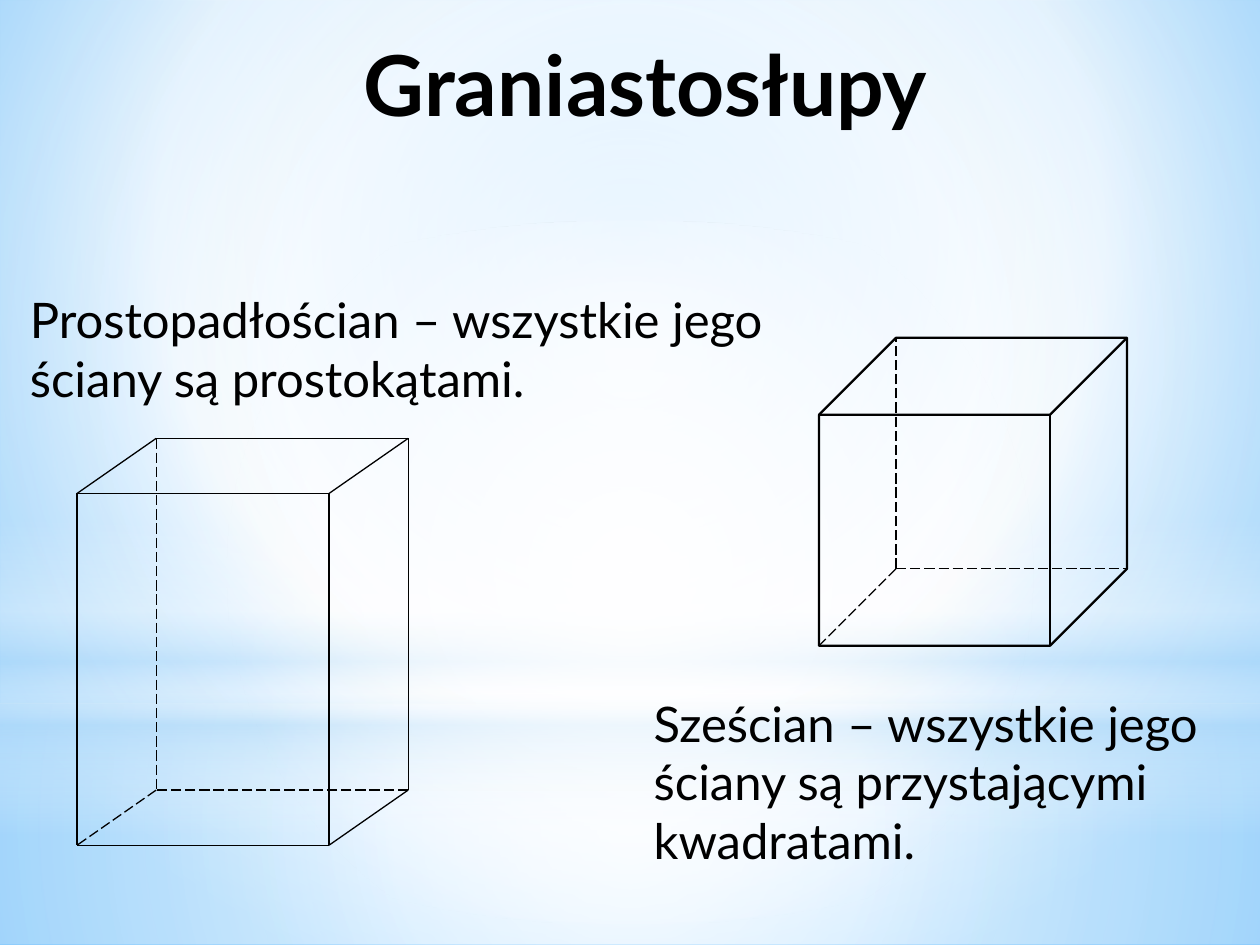
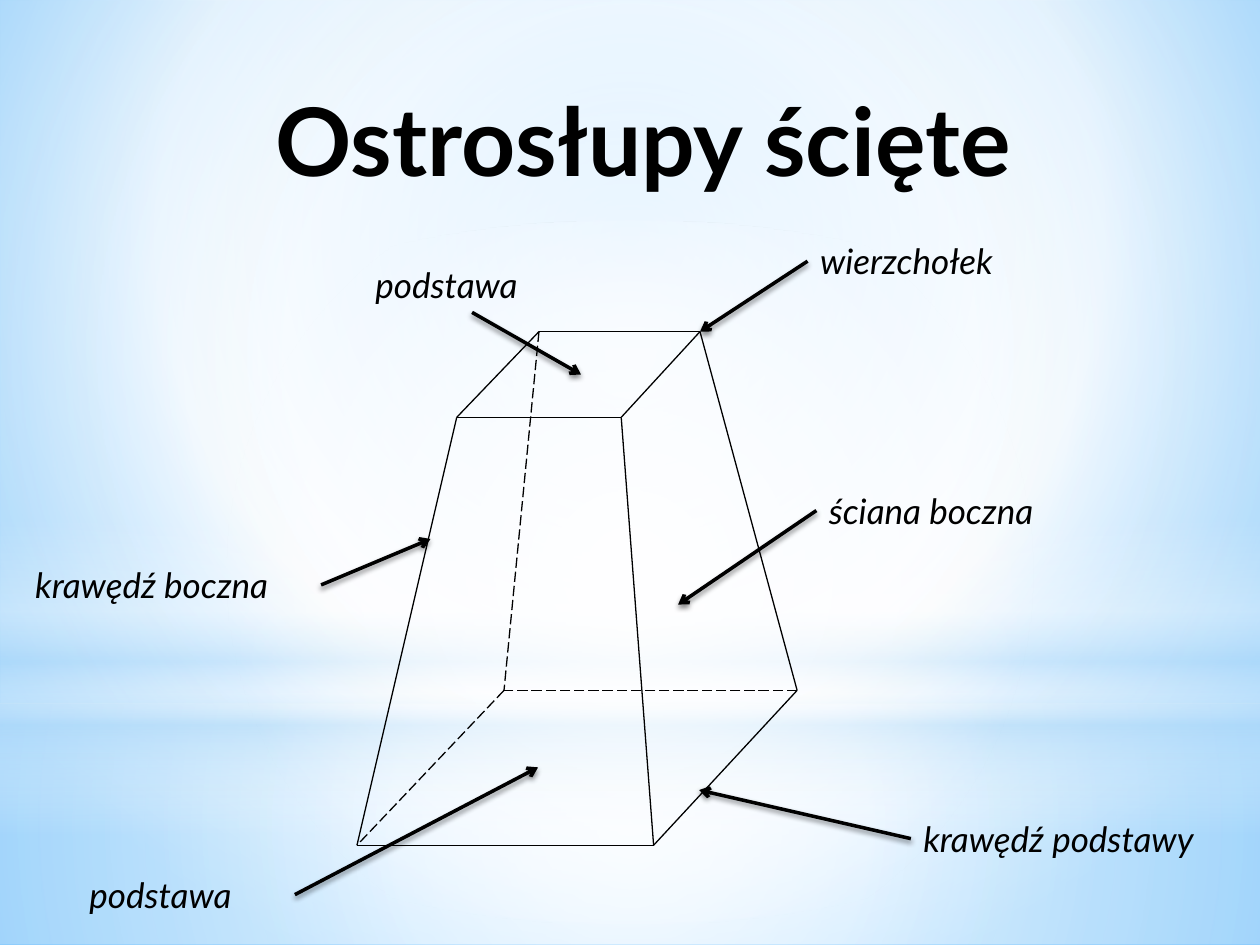
import pptx
import pptx.dml.color
import pptx.enum.dml
import pptx.enum.shapes
import pptx.enum.text
import pptx.oxml
import pptx.oxml.ns
import pptx.util

Pt = pptx.util.Pt
SHAPE = pptx.enum.shapes.MSO_SHAPE
ALIGN = pptx.enum.text.PP_ALIGN
LONG_DASH = pptx.enum.dml.MSO_LINE.LONG_DASH

# Shared style
WIDTH, HEIGHT = 720, 540
FONT, BLACK, WHITE, SKY, GLOW = "Lato", "000000", "FFFFFF", "B4DCFA", "52D2FF"
THIN, CUBE_LINE, ARROW_LINE = 0.75, 1.25, 2
TOP, BOTTOM, LEFT, RIGHT = 0, 2, 1, 3

# Gradients: stops are (position, colour, opacity) in percent
CENTRE = (50, 50, 50, 50)
BACKGROUND = ([(0, "9ED5FF", 100), (60, WHITE, 100), (100, "5BB9FF", 100)], (20, 10, 20, 60))
BANDS = [  # preset, top, height, stops, focus (None for a vertical gradient)
    (SHAPE.RECTANGLE, 402, 138, [(0, WHITE, 91), (37, WHITE, 76), (100, SKY, 79)], CENTRE),
    (SHAPE.RECTANGLE, 0, 402, [(0, WHITE, 89), (48, WHITE, 62), (100, SKY, 79)], CENTRE),
    (SHAPE.RECTANGLE, 297, 180, [(0, WHITE, 0), (29, WHITE, 30), (45, SKY, 40),
                                 (55, WHITE, 26), (65, SKY, 60), (100, WHITE, 0)], None),
    (SHAPE.OVAL, 126, 402, [(0, WHITE, 100), (56, WHITE, 0)], CENTRE),
]

# Slide 1: prisms
PRISM_TITLE = ("Graniastosłupy", 48, (52, 15, 634, 65.5), True)
DEFINITIONS = [
    ("Prostopadłościan – wszystkie jego ściany są prostokątami.", (10, 162, 450, 75)),
    ("Sześcian – wszystkie jego ściany są przystającymi kwadratami.", (366.5, 392.5, 338, 109)),
]
CUBOID_FRONT = (44, 282, 188, 483)  # left, top, right, bottom
CUBOID_DEPTH = (45.25, -31.5)
CUBE_LEFT, CUBE_TOP, CUBE_SIZE = 468, 193, 176

# Slide 2: frustum, corners as front left, front right, back right, back left
FRUSTUM_TITLE = ("Ostrosłupy ścięte", 54, (141, 43, 453, 73), False)
FRUSTUM_TOP = [(261, 238.5), (355, 238.5), (400, 189.5), (308, 189.5)]
FRUSTUM_BASE = [(204, 483), (373.5, 483), (455.5, 394.5), (288, 394.5)]
LABEL_HEIGHT = 31.5
LABELS = [  # text, left, top, width, side the arrow leaves, arrow tip
    ("wierzchołek", 461.5, 133.5, 153.5, LEFT, (400, 189.5)),
    ("ściana boczna", 466.5, 276, 193, LEFT, (387.5, 345.5)),
    ("krawędź boczna", 13, 318.5, 170.5, RIGHT, (246, 308)),
    ("krawędź podstawy", 520.5, 463.5, 187, LEFT, (399.5, 451.5)),
    ("podstawa", 207.5, 147, 124.5, BOTTOM, (332, 214)),
    ("podstawa", 44, 495.5, 124.5, RIGHT, (307.5, 438.5)),
]


def color(hex_code):
    return pptx.dml.color.RGBColor.from_string(hex_code)


def drawing_xml(markup):
    """Parse one DrawingML element, adding the namespace to its first tag."""
    name, rest = markup[1:].split(" ", 1)
    return pptx.oxml.parse_xml(f"<{name} {pptx.oxml.ns.nsdecls('a')} {rest}")


def set_gradient(fill, holder, stops, focus):
    fill.solid()
    stop_xml = "".join(
        f'<a:gs pos="{position * 1000}"><a:srgbClr val="{code}">'
        f'<a:alpha val="{opacity * 1000}"/></a:srgbClr></a:gs>'
        for position, code, opacity in stops)
    if focus:
        sides = " ".join(f'{side}="{share * 1000}"' for side, share in zip("ltrb", focus))
        direction = f'<a:path path="circle"><a:fillToRect {sides}/></a:path>'
    else:
        direction = '<a:lin ang="5400000" scaled="0"/>'
    solid = holder.find(pptx.oxml.ns.qn("a:solidFill"))
    holder.replace(solid, drawing_xml(
        f'<a:gradFill rotWithShape="1"><a:gsLst>{stop_xml}</a:gsLst>{direction}</a:gradFill>'))


def place(shape, area):
    shape.left, shape.top, shape.width, shape.height = map(Pt, area)


def write(shape, text, size, wrap=True, align=ALIGN.LEFT, bold=False, italic=False):
    frame = shape.text_frame
    frame.word_wrap = wrap
    frame.auto_size = pptx.enum.text.MSO_AUTO_SIZE.SHAPE_TO_FIT_TEXT
    frame.vertical_anchor = pptx.enum.text.MSO_ANCHOR.TOP
    para = frame.paragraphs[0]
    para.alignment = align
    span = para.add_run()
    span.text = text
    font = span.font
    font.name, font.size, font.bold, font.italic = FONT, Pt(size), bold, italic
    font.color.rgb = color(BLACK)
    return span


def add_text(slide, text, size, area, italic=False):
    box = slide.shapes.add_textbox(*map(Pt, area))
    write(box, text, size, italic=italic)
    return box


def add_title(slide, text, size, area, wrap):
    title = slide.shapes.title
    place(title, area)
    span = write(title, text, size, wrap, ALIGN.CENTER, bold=True)
    span.font.color.rgb = color(BLACK)
    properties = span.font.fill  # the outline goes before the fill
    properties.solid()
    properties.fore_color.rgb = color(BLACK)
    run_properties = title.element.xpath(".//a:rPr")[0]
    run_properties.insert(0, drawing_xml(
        f'<a:ln w="{Pt(1.42)}"><a:solidFill><a:srgbClr val="{GLOW}"/></a:solidFill></a:ln>'))


def add_line(shapes, start, end, weight=THIN, dashed=False, effect=""):
    line = shapes.add_connector(pptx.enum.shapes.MSO_CONNECTOR.STRAIGHT,
                                *map(Pt, (*start, *end)))
    line.line.color.rgb = color(BLACK)
    line.line.width = Pt(weight)
    if dashed:
        line.line.dash_style = LONG_DASH
    line.element.spPr.append(drawing_xml(f"<a:effectLst >{effect}</a:effectLst>"))
    return line


def add_solid(slide, top, base):
    """Draw the edges of a six-faced solid; those at the back left base corner are hidden."""
    group = slide.shapes.add_group_shape()
    for corner in range(4):
        following = (corner + 1) % 4
        add_line(group.shapes, top[corner], top[following])
        add_line(group.shapes, base[corner], base[following], dashed=3 in (corner, following))
        add_line(group.shapes, top[corner], base[corner], dashed=corner == 3)


def add_cube(slide, left, top, size):
    group = slide.shapes.add_group_shape()
    cube = group.shapes.add_shape(SHAPE.CUBE, *map(Pt, (left, top, size, size)))
    cube.shadow.inherit = False
    cube.fill.background()
    cube.line.color.rgb = color(BLACK)
    cube.line.width = Pt(CUBE_LINE)
    depth = size / 4
    hidden_corner = (left + depth, top + size - depth)
    for end in [(left + depth, top), (left + size, top + size - depth), (left, top + size)]:
        add_line(group.shapes, hidden_corner, end, dashed=True)


def add_label(slide, text, left, top, width, side, tip):
    box = add_text(slide, text, 20, (left, top, width, LABEL_HEIGHT), italic=True)
    shadow = (f'<a:outerShdw blurRad="{Pt(3.1)}" dist="{Pt(1.8)}" dir="5400000" rotWithShape="0">'
              f'<a:srgbClr val="{BLACK}"><a:alpha val="45000"/></a:srgbClr></a:outerShdw>')
    arrow = add_line(slide.shapes, (left, top), tip, ARROW_LINE, effect=shadow)
    arrow.begin_connect(box, side)
    arrow.line.fill.solid()
    arrow.line.color.rgb = color(BLACK)
    arrow.element.spPr.find(pptx.oxml.ns.qn("a:ln")).append(drawing_xml('<a:tailEnd type="arrow"/>'))


def decorate_master(deck, slide):
    """Give the master its background and light bands, behind its placeholders."""
    master = deck.slide_master
    fill = master.background.fill
    set_gradient(fill, master.element.xpath(".//p:bgPr")[0], *BACKGROUND)
    tree = master.element.cSld.spTree
    for index, (preset, top, height, stops, focus) in enumerate(BANDS):
        band = slide.shapes.add_shape(preset, *map(Pt, (0, top, WIDTH, height)))
        band.shadow.inherit = False
        band.line.fill.background()
        set_gradient(band.fill, band.element.spPr, stops, focus)
        band.element.nvSpPr.cNvPr.set("id", str(100 + index))
        tree.insert(2 + index, band.element)


def main():
    deck = pptx.Presentation()
    deck.slide_width, deck.slide_height = Pt(WIDTH), Pt(HEIGHT)
    title_only = deck.slide_layouts[5]

    # Prisms
    prisms = deck.slides.add_slide(title_only)
    decorate_master(deck, prisms)
    add_title(prisms, *PRISM_TITLE)
    left, top, right, bottom = CUBOID_FRONT
    shift_x, shift_y = CUBOID_DEPTH
    faces = [[(left, y), (right, y), (right + shift_x, y + shift_y), (left + shift_x, y + shift_y)]
             for y in (top, bottom)]
    add_solid(prisms, *faces)
    add_cube(prisms, CUBE_LEFT, CUBE_TOP, CUBE_SIZE)
    for text, area in DEFINITIONS:
        add_text(prisms, text, 28, area)

    # Frustum with labelled parts
    frustum = deck.slides.add_slide(title_only)
    add_title(frustum, *FRUSTUM_TITLE)
    add_solid(frustum, FRUSTUM_TOP, FRUSTUM_BASE)
    for label in LABELS:
        add_label(frustum, *label)

    deck.save("out.pptx")


if __name__ == "__main__":
    main()
